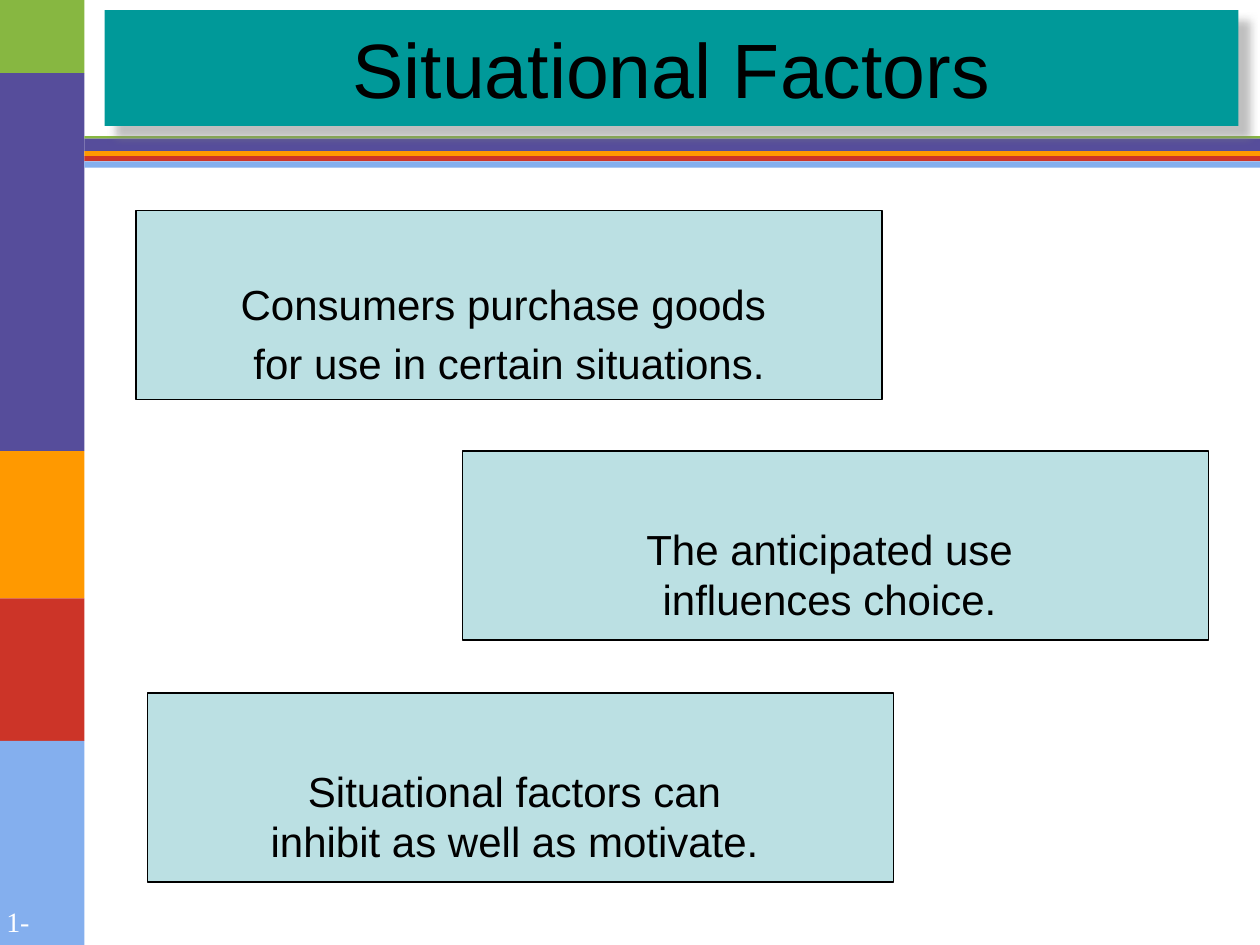
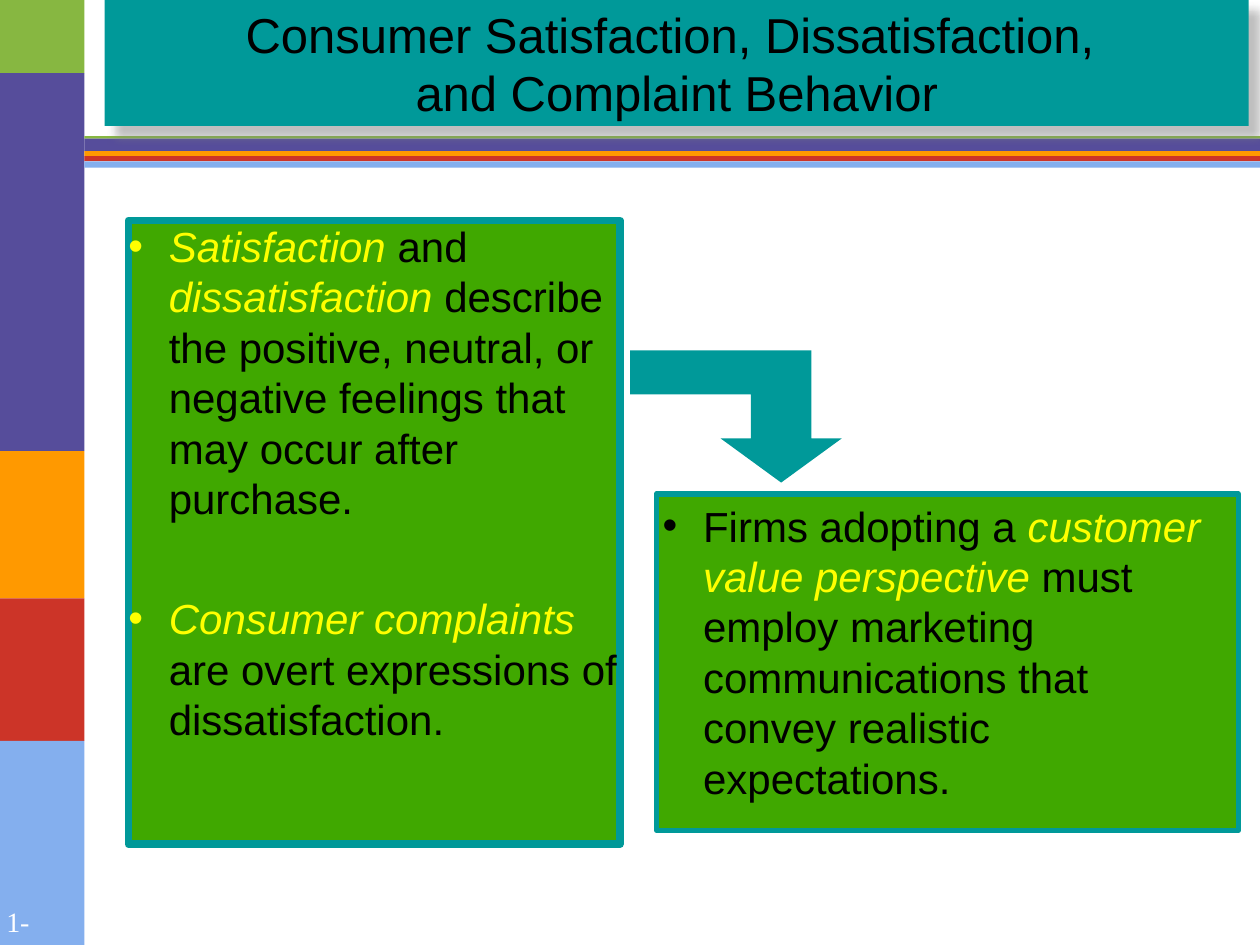
from itertools import pairwise

from lxml import etree
from pptx import Presentation
from pptx.dml.color import RGBColor
from pptx.enum.shapes import MSO_SHAPE as Shape
from pptx.enum.text import MSO_ANCHOR as Anchor, PP_ALIGN as Align
from pptx.oxml.ns import qn
from pptx.util import Inches, Pt

COLORS = {
    "green": "87B741", "purple": "564D9B", "orange": "FF9900",
    "red": "CC3428", "sky": "84AFEE", "teal": "009999", "pale": "BBE0E3",
    "grass": "40A800", "yellow": "FFFF00", "black": "000000",
    "white": "FFFFFF", "shadow": "808080",
}
BANDS = ["green", "purple", "orange", "red", "sky"]
SIDE_EDGES = [0, 0.58, 3.58, 4.75, 5.88, 7.5]
RULE_EDGES = [1.08, 1.1, 1.2, 1.24, 1.28, 1.33]
SIDE_WIDTH = 0.67


def rgb(name):
    return RGBColor.from_string(COLORS[name])


def add_node(parent, tag, **attributes):
    return etree.SubElement(parent, qn(tag), attributes)


class SlideBuilder:
    font = "Arial"
    body_size = 24

    def __init__(self):
        self.deck = Presentation()
        self.deck.slide_width = Inches(10)
        self.deck.slide_height = Inches(7.5)
        self.page = None

    def start_page(self):
        self.page = self.deck.slides.add_slide(self.deck.slide_layouts[6])
        for color, (top, bottom) in zip(BANDS, pairwise(SIDE_EDGES)):
            self.rectangle(0, top, SIDE_WIDTH, bottom - top, color)
        for color, (top, bottom) in zip(BANDS, pairwise(RULE_EDGES)):
            self.rectangle(SIDE_WIDTH, top, 10 - SIDE_WIDTH, bottom - top, color)
        self.page_number()

    def paint(self, shape, fill, line=None, line_width=0.75):
        shape.shadow.inherit = False
        shape.fill.solid()
        shape.fill.fore_color.rgb = rgb(fill)
        if line:
            shape.line.color.rgb = rgb(line)
            shape.line.width = Pt(line_width)
            add_node(shape.line._get_or_add_ln(), "a:round")
        else:
            shape.line.fill.background()
        return shape

    def rectangle(self, left, top, width, height, fill, line=None, line_width=0.75):
        box = self.page.shapes.add_shape(
            Shape.RECTANGLE, Inches(left), Inches(top), Inches(width), Inches(height))
        return self.paint(box, fill, line, line_width)

    def frame(self, box, anchor, margin=0):
        frame = box.text_frame
        frame.word_wrap = True
        frame.vertical_anchor = anchor
        frame.margin_left = frame.margin_right = Inches(margin)
        frame.margin_top = frame.margin_bottom = Inches(margin)
        return frame

    def style(self, item, size, color="black", font=None):
        item.font.name = font or self.font
        item.font.size = Pt(size)
        item.font.color.rgb = rgb(color)

    def centered(self, frame, text, size, gap=0):
        frame.text = text
        for index, para in enumerate(frame.paragraphs):
            para.alignment = Align.CENTER
            if index:
                para.space_before = Pt(gap)
            for span in para.runs:
                self.style(span, size)

    def page_number(self):
        box = self.page.shapes.add_textbox(
            Inches(0), Inches(7.13), Inches(SIDE_WIDTH), Inches(0.34))
        frame = self.frame(box, Anchor.TOP, 0.05)
        frame.text = "1-"
        self.style(frame.paragraphs[0].runs[0], 16, "white", "Times New Roman")

    def title(self, text, top, width, size):
        box = self.rectangle(0.83, top, width, 1 - top, "teal")
        effects = box._element.spPr.find(qn("a:effectLst"))
        shadow = add_node(
            effects, "a:outerShdw", blurRad=str(Pt(5)), dist=str(Pt(8.5)),
            dir="2700000", algn="ctr", rotWithShape="0")
        color = add_node(shadow, "a:srgbClr", val=COLORS["shadow"])
        add_node(color, "a:alpha", val="50000")
        self.centered(self.frame(box, Anchor.MIDDLE), text, size)

    def statement(self, left, top, text, gap=0):
        box = self.rectangle(left, top, 5.92, 1.5, "pale", "black")
        frame = self.frame(box, Anchor.MIDDLE)
        frame.margin_top = Inches(0.45)
        self.centered(frame, text, self.body_size, gap)

    def bullet_panel(self, left, top, width, height, line_width, margin, bullets, bullet_color):
        box = self.rectangle(left, top, width, height, "grass", "teal", line_width)
        frame = self.frame(box, Anchor.TOP, margin)
        for index, spans in enumerate(bullets):
            para = frame.add_paragraph() if index else frame.paragraphs[0]
            para.alignment = Align.LEFT
            if index:
                para.space_before = Pt(40)
            indent = Inches(0.32)
            properties = para._p.get_or_add_pPr()
            properties.set("marL", str(indent))
            properties.set("indent", str(-indent))
            color = add_node(properties, "a:buClr")
            add_node(color, "a:srgbClr", val=COLORS[bullet_color])
            add_node(properties, "a:buFont", typeface=self.font)
            add_node(properties, "a:buChar", char="•")
            for text, is_term in spans:
                span = para.add_run()
                span.text = text
                self.style(span, self.body_size, "yellow" if is_term else "black")
                span.font.italic = is_term

    def outline(self, points, fill):
        corners = [(Inches(x), Inches(y)) for x, y in points]
        builder = self.page.shapes.build_freeform(*corners[0])
        builder.add_line_segments(corners[1:], close=True)
        self.paint(builder.convert_to_shape(), fill)


def situational_factors(slides):
    slides.start_page()
    slides.title("Situational Factors", 0.08, 9, 44)
    slides.statement(
        1.08, 1.67, "Consumers purchase goods \nfor use in certain situations.", 5)
    slides.statement(
        1.17, 5.5, "Situational factors can \ninhibit as well as motivate. ")
    slides.statement(3.67, 3.58, "The anticipated use \ninfluences choice. ")


def consumer_satisfaction(slides):
    slides.start_page()
    slides.title(
        "Consumer Satisfaction, Dissatisfaction, \vand Complaint Behavior", 0, 9.08, 28)
    feelings = [
        ("Satisfaction", True), (" and ", False), ("dissatisfaction", True),
        (" describe the positive, neutral, or negative feelings that may occur "
         "after purchase.", False),
    ]
    complaints = [
        ("Consumer complaints", True),
        (" are overt expressions of dissatisfaction.", False),
    ]
    firms = [
        ("Firms adopting a ", False), ("customer value perspective", True),
        (" must employ marketing communications that convey realistic "
         "expectations.", False),
    ]
    slides.bullet_panel(1.02, 1.75, 3.9, 4.95, 4.5, 0, [feelings, complaints], "yellow")
    slides.bullet_panel(5.21, 3.92, 4.62, 2.67, 3, 0.05, [firms], "black")
    slides.outline(
        [(6.2, 3.83), (5.72, 3.48), (5.96, 3.48), (5.96, 3.13), (5, 3.13),
         (5, 2.78), (6.44, 2.78), (6.44, 3.48), (6.68, 3.48)], "teal")


def main():
    slides = SlideBuilder()
    situational_factors(slides)
    consumer_satisfaction(slides)
    slides.deck.save("out.pptx")


if __name__ == "__main__":
    main()
